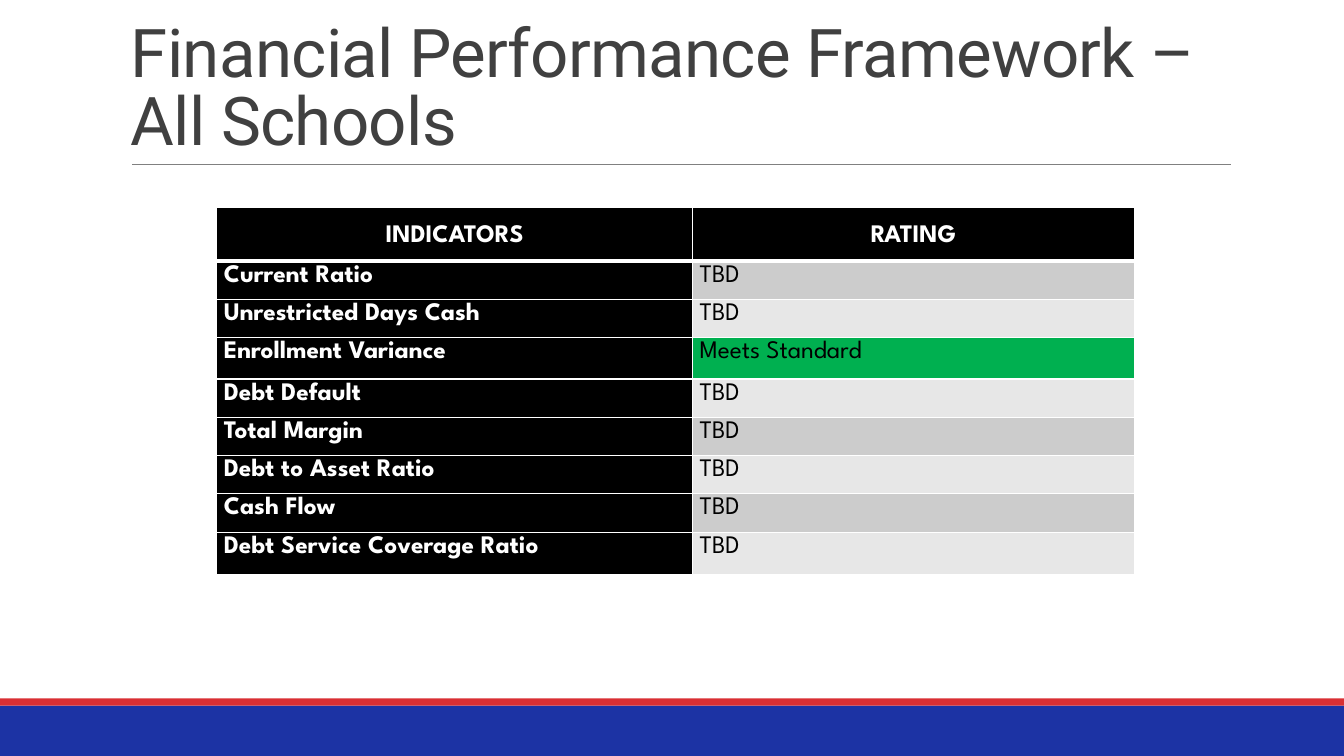
from dataclasses import dataclass

from lxml.etree import SubElement
from pptx import Presentation
from pptx.dml.color import RGBColor as RGB
from pptx.enum.shapes import MSO_CONNECTOR as CONNECTOR, MSO_SHAPE as SHAPE
from pptx.enum.text import MSO_ANCHOR as ANCHOR, PP_ALIGN as ALIGN
from pptx.oxml.ns import qn
from pptx.util import Pt

PX = 9144  # EMU per px, 100 px to the inch
SLIDE_WIDTH, SLIDE_HEIGHT = 1333, 750


@dataclass(frozen=True)
class Theme:
    blue: str = "1C33A4"
    red: str = "D92F33"
    rule: str = "808080"
    title: str = "404040"
    black: str = "000000"
    white: str = "FFFFFF"
    bands: tuple = ("CCCCCC", "E7E7E7")
    meets: str = "00B050"
    title_font: str = "Roboto"
    table_font: str = "League Spartan"
    title_size: int = 48
    table_size: int = 18


THEME = Theme()
HEADINGS = ("INDICATORS", "RATING")
PENDING, MEETS = "TBD", "Meets Standard"
RATINGS = (
    ("Current Ratio", PENDING),
    ("Unrestricted Days Cash", PENDING),
    ("Enrollment Variance", MEETS),
    ("Debt Default", PENDING),
    ("Total Margin", PENDING),
    ("Debt to Asset Ratio", PENDING),
    ("Cash Flow", PENDING),
    ("Debt Service Coverage Ratio", PENDING),
)
COLUMN_WIDTHS = (472, 438)
ROW_HEIGHTS = (53, 38, 38, 41, 38, 38, 38, 38, 42)


def px(*lengths):
    return [length * PX for length in lengths]


def style_run(run, font, size, color, bold=False):
    run.font.name = font
    run.font.size = Pt(size)
    run.font.bold = bold
    run.font.color.rgb = RGB.from_string(color)


def add_band(slide, top, height, color):
    """Full-width footer stripe."""
    band = slide.shapes.add_shape(
        SHAPE.RECTANGLE, *px(0, top, SLIDE_WIDTH, height))
    band.shadow.inherit = False
    band.fill.solid()
    band.fill.fore_color.rgb = RGB.from_string(color)
    band.line.fill.background()


def add_rule(slide, left, right, y):
    rule = slide.shapes.add_connector(
        CONNECTOR.STRAIGHT, *px(left, y, right, y))
    rule.line.color.rgb = RGB.from_string(THEME.rule)
    rule.line.width = Pt(0.5)
    SubElement(rule._element.spPr, qn("a:effectLst"))


def add_title(slide, wording):
    frame = slide.shapes.add_textbox(*px(120, 4, 1100, 159)).text_frame
    frame.word_wrap = True
    frame.vertical_anchor = ANCHOR.BOTTOM
    frame.text = wording
    heading = frame.paragraphs[0]
    heading.line_spacing = 0.85
    run = heading.runs[0]
    style_run(run, THEME.title_font, THEME.title_size, THEME.title)
    run.font._element.set("spc", "-50")


def add_borders(cell, top, bottom):
    """White cell borders; side borders are 1 pt wide."""
    properties = cell._tc.get_or_add_tcPr()
    for side, width in (("L", 1), ("R", 1), ("T", top), ("B", bottom)):
        border = SubElement(properties, qn(f"a:ln{side}"), w=str(Pt(width)))
        fill = SubElement(border, qn("a:solidFill"))
        SubElement(fill, qn("a:srgbClr"), val=THEME.white)


def fill_cell(cell, wording, row, column):
    is_header = row == 0
    is_label = is_header or column == 0
    if is_label:
        background = THEME.black
    elif wording == MEETS:
        background = THEME.meets
    else:
        background = THEME.bands[(row - 1) % 2]

    add_borders(cell, top=3 if row == 1 else 1, bottom=3 if is_header else 1)
    cell.fill.solid()
    cell.fill.fore_color.rgb = RGB.from_string(background)
    cell.margin_left = cell.margin_right = 7 * PX
    cell.margin_top = cell.margin_bottom = 0
    cell.vertical_anchor = ANCHOR.MIDDLE if is_header else ANCHOR.TOP

    cell.text_frame.text = wording
    paragraph = cell.text_frame.paragraphs[0]
    paragraph.alignment = ALIGN.CENTER if is_header else ALIGN.JUSTIFY
    paragraph.line_spacing = 1.15
    style_run(paragraph.runs[0], THEME.table_font, THEME.table_size,
              THEME.white if is_label else THEME.black, bold=is_label)


def add_ratings_table(slide, left, top):
    rows = (HEADINGS, *RATINGS)
    table = slide.shapes.add_table(
        len(rows), len(HEADINGS),
        *px(left, top, sum(COLUMN_WIDTHS), sum(ROW_HEIGHTS))).table
    for column, width in zip(table.columns, COLUMN_WIDTHS):
        column.width = width * PX
    for row, height in zip(table.rows, ROW_HEIGHTS):
        row.height = height * PX
    for r, wordings in enumerate(rows):
        for c, wording in enumerate(wordings):
            fill_cell(table.cell(r, c), wording, r, c)


def main():
    deck = Presentation()
    deck.slide_width, deck.slide_height = px(SLIDE_WIDTH, SLIDE_HEIGHT)
    slide = deck.slides.add_slide(deck.slide_layouts[6])
    add_band(slide, 700, 50, THEME.blue)
    add_band(slide, 693, 7, THEME.red)
    add_rule(slide, 131, 1221, 163)
    add_title(slide, "Financial Performance Framework – All Schools")
    add_ratings_table(slide, 215, 206)
    deck.save("out.pptx")


if __name__ == "__main__":
    main()
